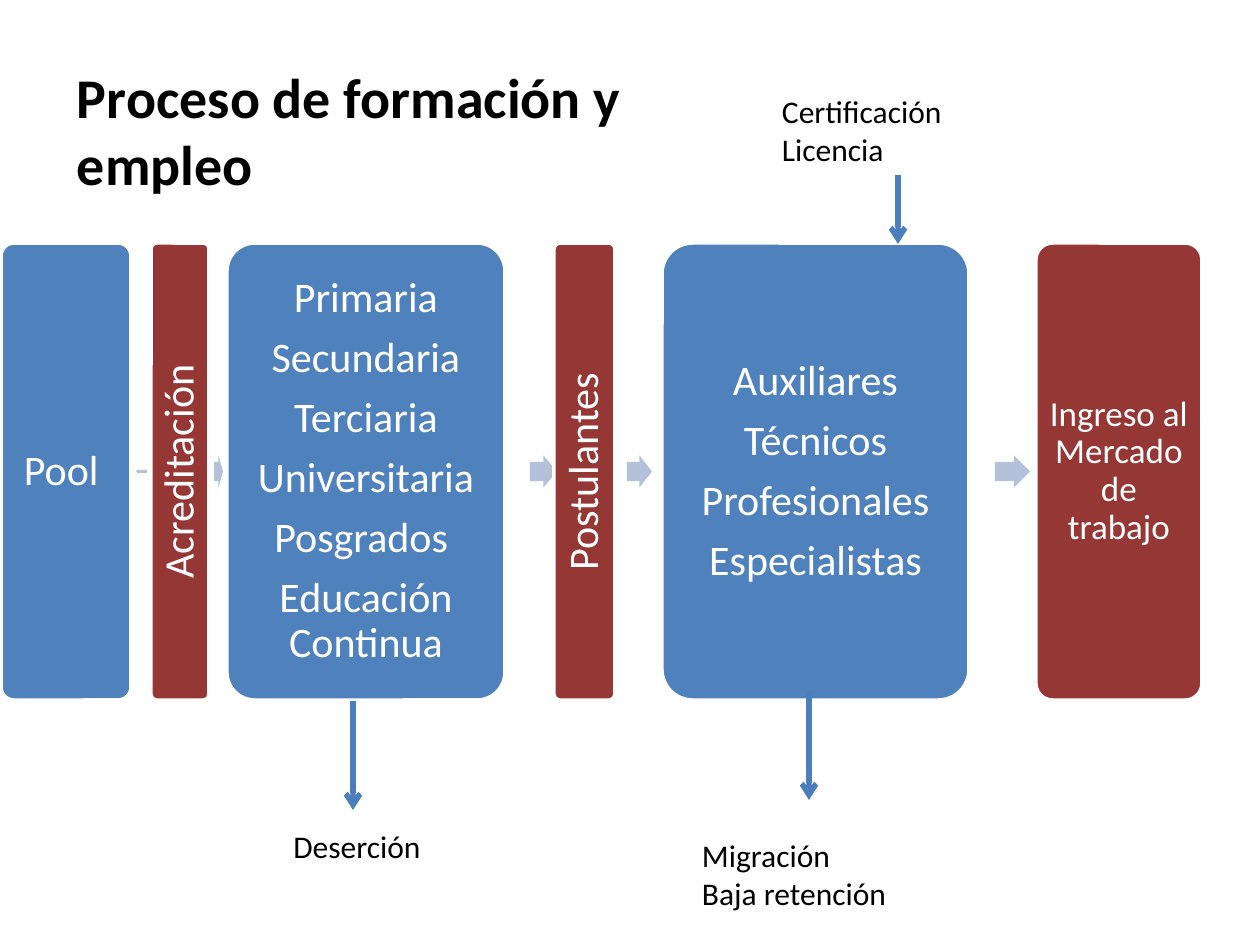
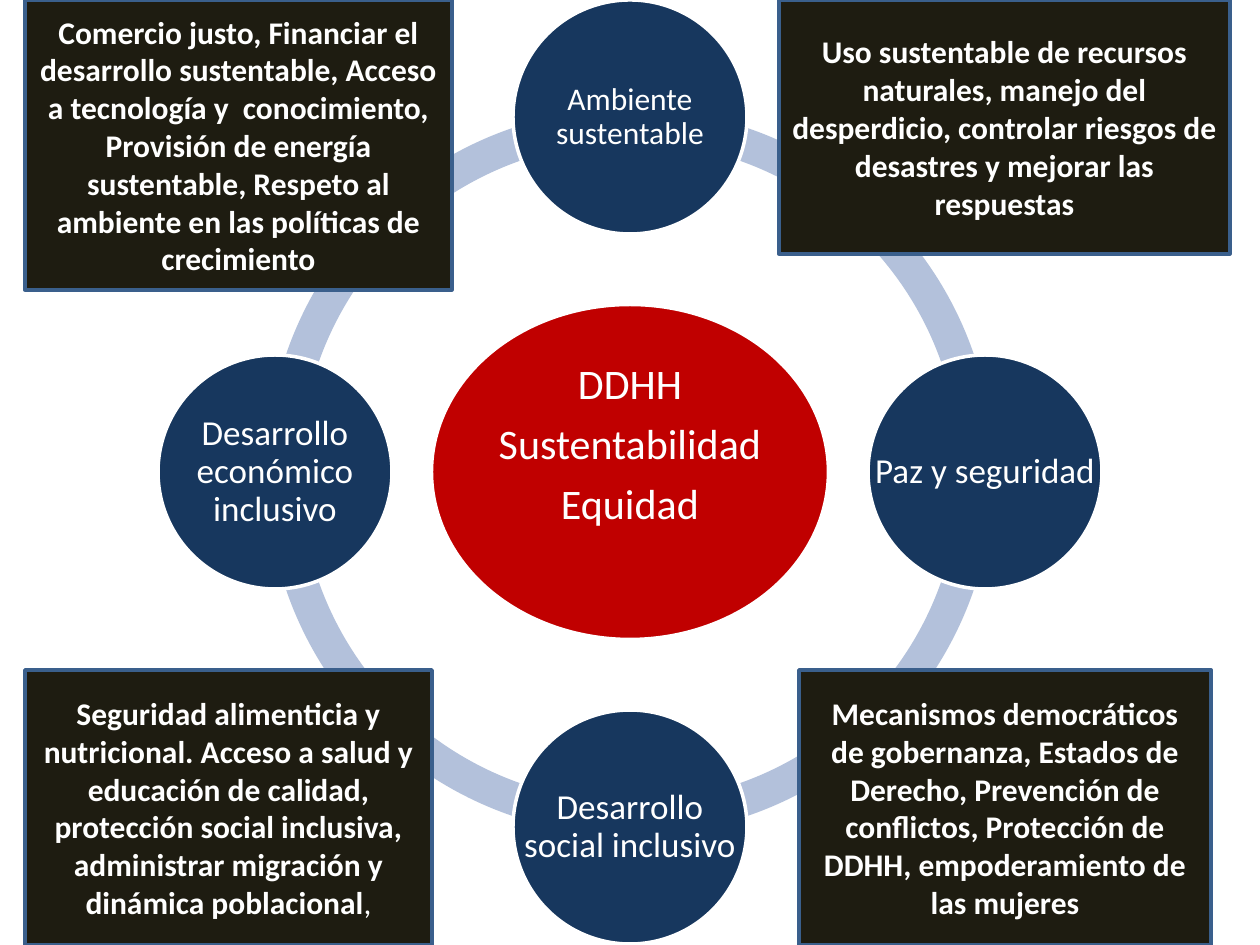
import dataclasses
import pptx
import pptx.dml.color
import pptx.enum.shapes
import pptx.enum.text
import pptx.oxml
import pptx.oxml.ns
import pptx.util

SHAPE = pptx.enum.shapes.MSO_SHAPE
ALIGN = pptx.enum.text.PP_ALIGN
ANCHOR = pptx.enum.text.MSO_ANCHOR
SCALE = pptx.util.Inches(1) / 126


@dataclasses.dataclass(frozen=True)
class Theme:
    font: str = "Calibri"
    white: str = "FFFFFF"
    black: str = "000000"
    stage: str = "4F81BD"
    gate: str = "953735"
    link: str = "B3C1DB"
    flow: str = "4B7EBC"
    pillar: str = "17375E"
    hub: str = "C00000"
    panel: str = "1E1C11"
    panel_line: str = "3A5F8C"
    title_size: int = 32
    large: int = 24
    medium: int = 20
    small: int = 18


THEME = Theme()


def px(value):
    return pptx.util.Emu(round(value * SCALE))


def color(value):
    return pptx.dml.color.RGBColor.from_string(value)


# Shared parts
def add_shape(slide, kind, box, fill, line=None):
    shape = slide.shapes.add_shape(kind, *map(px, box))
    shape.shadow.inherit = False
    shape.fill.solid()
    shape.fill.fore_color.rgb = color(fill)
    if line:
        shape.line.color.rgb = color(line)
        shape.line.width = pptx.util.Pt(2)
    else:
        shape.line.fill.background()
    return shape


def write(shape, lines, size, ink=THEME.white, bold=False, align=ALIGN.CENTER,
          anchor=ANCHOR.MIDDLE, insets=(13, 6, 13, 6), wrap=True, compact=False):
    """Fill the text frame; compact text has tight lines and gaps between paragraphs."""
    frame = shape.text_frame
    frame.word_wrap = wrap
    frame.vertical_anchor = anchor
    frame.margin_left, frame.margin_top, frame.margin_right, frame.margin_bottom = map(px, insets)
    frame.text = "\n".join(lines)
    for paragraph in frame.paragraphs:
        paragraph.alignment = align
        paragraph.font.name = THEME.font
        paragraph.font.size = pptx.util.Pt(size)
        paragraph.font.bold = bold
        paragraph.font.color.rgb = color(ink)
        if compact:
            paragraph.line_spacing = 0.9
    if compact:
        for paragraph in frame.paragraphs[:-1]:
            paragraph.space_after = pptx.util.Pt(0.35 * size)
    return frame


def add_label(slide, box, lines, align=ALIGN.LEFT):
    label = slide.shapes.add_textbox(*map(px, box))
    write(label, lines, THEME.small, THEME.black, align=align, anchor=ANCHOR.TOP)


def add_flow_arrow(slide, x, top, bottom):
    arrow = slide.shapes.add_connector(
        pptx.enum.shapes.MSO_CONNECTOR.STRAIGHT, px(x), px(top), px(x), px(bottom))
    arrow.line.color.rgb = color(THEME.flow)
    arrow.line.width = pptx.util.Pt(3)
    line = arrow.line._get_or_add_ln()
    line.append(pptx.oxml.parse_xml(f'<a:tailEnd {pptx.oxml.ns.nsdecls("a")} type="arrow"/>'))
    arrow._element.spPr.append(
        pptx.oxml.parse_xml(f'<a:effectLst {pptx.oxml.ns.nsdecls("a")}/>'))


# Slide 1: training and employment process
def add_title(slide, box, text):
    title = slide.shapes.title
    title.left, title.top, title.width, title.height = map(px, box)
    frame = write(title, [text], THEME.title_size, THEME.black, bold=True,
                  align=ALIGN.LEFT, anchor=ANCHOR.TOP)
    frame.auto_size = pptx.enum.text.MSO_AUTO_SIZE.NONE


def add_stage(slide, box, fill, lines, size=THEME.large, inset=12, vertical=False):
    stage = add_shape(slide, SHAPE.ROUNDED_RECTANGLE, box, fill, THEME.white)
    stage.adjustments[0] = 0.1
    frame = write(stage, lines, size, insets=[inset] * 4, compact=True)
    if vertical:
        frame._txBody.bodyPr.set("vert", "vert270")


def add_link(slide, x, middle, width, height, kind=SHAPE.RIGHT_ARROW):
    link = add_shape(slide, kind, (x, middle - height / 2, width, height), THEME.link)
    link.adjustments[0] = 0.6
    link.adjustments[1] = 0.5


def add_process(slide, top, height):
    middle = top + height / 2

    def stage(x, width, *args, **options):
        add_stage(slide, (x, top, width, height), *args, **options)

    stage(1, 130, THEME.stage, ["Pool "])
    add_link(slide, 136, middle, 11, 5, SHAPE.LEFT_ARROW)
    stage(151, 58, THEME.gate, ["Acreditación"], inset=4, vertical=True)
    add_link(slide, 214, middle, 9, 32)
    stage(227, 278, THEME.stage, ["Primaria", "Secundaria", "Terciaria", "Universitaria",
                                  "Posgrados ", "Educación Continua"])
    add_link(slide, 530, middle, 27, 32)
    stage(554, 61, THEME.gate, ["Postulantes"], inset=4, vertical=True)
    add_link(slide, 627, middle, 25, 32)
    stage(662, 307, THEME.stage, ["Auxiliares", "Técnicos", "Profesionales", "Especialistas"])
    add_link(slide, 995, middle, 35, 32)
    stage(1036, 166, THEME.gate, ["Ingreso al Mercado de trabajo"], size=THEME.medium, inset=7)


def build_process_slide(presentation):
    slide = presentation.slides.add_slide(presentation.slide_layouts[5])
    add_process(slide, 243, 457)
    for x, top, bottom in ((353, 701, 810), (809, 691, 800), (898, 175, 244)):
        add_flow_arrow(slide, x, top, bottom)
    add_label(slide, (223, 821, 268, 50), ["Deserción"], ALIGN.CENTER)
    add_label(slide, (689, 830, 268, 89), ["Migración", "Baja retención"])
    add_label(slide, (769, 86, 348, 89), ["Certificación", "Licencia"])
    add_title(slide, (64, 56, 645, 148), "Proceso de formación y empleo")


# Slide 2: sustainability cycle
def add_cycle(slide, center_x, center_y, radius):
    def box(width, height, dx=0, dy=0):
        return (center_x + dx - width / 2, center_y + dy - height / 2, width, height)

    # Ring in four quarters; angles are in units of 100000, a quarter turn being 54
    for quarter in range(4):
        arc = add_shape(slide, SHAPE.BLOCK_ARC, box(727, 727), THEME.link)
        arc.adjustments[0] = 54 * quarter
        arc.adjustments[1] = 54 * ((quarter + 1) % 4)
        arc.adjustments[2] = 0.046

    # Hub, its text raised by the bottom inset
    hub = add_shape(slide, SHAPE.OVAL, box(397, 335), THEME.hub, THEME.white)
    write(hub, ["DDHH", "Sustentabilidad", "Equidad"], THEME.large,
          insets=(4, 4, 4, 57), compact=True)

    # Pillars at the four compass points
    pillars = (
        (0, -1, "Ambiente\vsustentable", THEME.small),
        (1, 0, "Paz y seguridad", THEME.medium),
        (0, 1, "Desarrollo\vsocial inclusivo", THEME.medium),
        (-1, 0, "Desarrollo\veconómico\vinclusivo", THEME.medium),
    )
    for across, down, text, size in pillars:
        pillar = add_shape(slide, SHAPE.OVAL, box(234, 234, across * radius, down * radius),
                           THEME.pillar, THEME.white)
        write(pillar, [text], size, insets=[4] * 4, wrap=False, compact=True)


def add_panel(slide, box, text):
    panel = add_shape(slide, SHAPE.RECTANGLE, box, THEME.panel, THEME.panel_line)
    return write(panel, [text], THEME.small, bold=True)


def build_cycle_slide(presentation):
    slide = presentation.slides.add_slide(presentation.slide_layouts[6])
    add_cycle(slide, 630, 472, 355)
    add_panel(slide, (779, 0, 451, 254),
              "Uso sustentable de recursos naturales, manejo del desperdicio, "
              "controlar riesgos de desastres y mejorar las respuestas")
    social = add_panel(slide, (25, 670, 407, 275),
                       "Seguridad alimenticia y nutricional. Acceso a salud y educación de "
                       "calidad, protección social inclusiva, administrar migración y "
                       "dinámica poblacional")
    comma = social.paragraphs[0].add_run()
    comma.text = ","
    comma.font.bold = False
    add_panel(slide, (799, 670, 412, 275),
              "Mecanismos democráticos de gobernanza, Estados de Derecho, Prevención de "
              "conflictos, Protección de DDHH, empoderamiento de las mujeres")
    add_panel(slide, (25, 0, 427, 290),
              "Comercio justo, Financiar el desarrollo sustentable, Acceso a tecnología y  "
              "conocimiento, Provisión de energía sustentable, Respeto al ambiente en las "
              "políticas de crecimiento")


def main():
    presentation = pptx.Presentation()
    presentation.slide_width = px(1260)
    presentation.slide_height = px(945)
    build_process_slide(presentation)
    build_cycle_slide(presentation)
    presentation.save("out.pptx")


if __name__ == "__main__":
    main()
